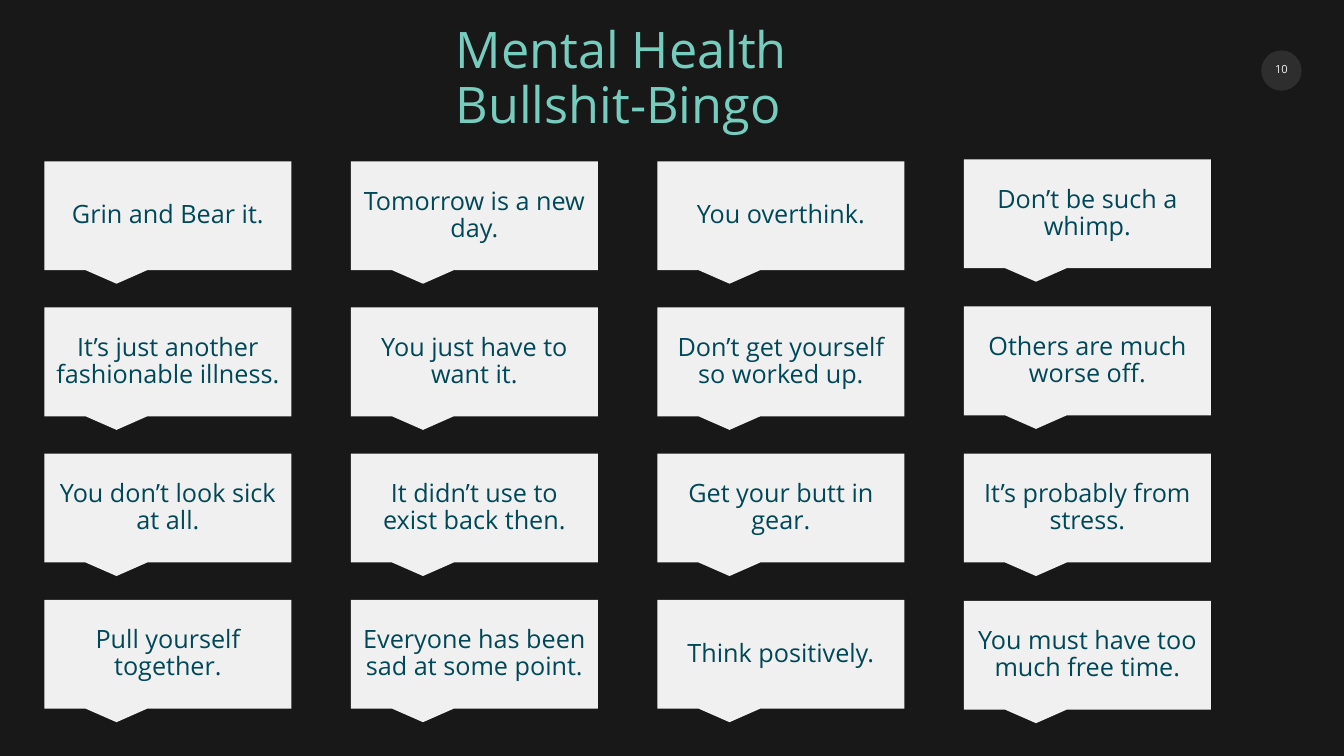
from lxml import etree
from pptx import Presentation, util as u
from pptx.dml.color import RGBColor
from pptx.enum import shapes, text
from pptx.oxml import ns

HUES = {"back": "181818", "card": "F0F0F0", "ink": "004857", "head": "76CCBD"}
PHRASES = [
    ["Grin and Bear it.", "Tomorrow is a new day.", "You overthink.", "Don’t be such a whimp."],
    ["It’s just another fashionable illness.", "You just have to want it.",
     "Don’t get yourself so worked up.", "Others are much worse off."],
    ["You don’t look sick at all.", "It didn’t use to exist back then.",
     "Get your butt in gear.", "It’s probably from stress."],
    ["Pull yourself together.", "Everyone has been sad at some point.",
     "Think positively.", "You must have too much free time."],
]


def fit(thing, form):
    for name, value in form.items():
        setattr(thing, name, value)


class Board:
    """Hold the style and the current slide of the bingo board."""

    font = "Open Sans"
    left, top = 0.44, 1.6
    col, row = 3.04, 1.45
    wide, high = 2.45, 1.08

    def __init__(self, deck):
        self.slide = deck.slides.add_slide(deck.slide_layouts[5])
        self.paint(self.slide.background.fill, "back")

    def paint(self, fill, hue):
        fill.solid()
        fill.fore_color.rgb = RGBColor.from_string(HUES[hue])

    def letter(self, shape, words, size, hue, align, anchor, pad=(0.1, 0.05)):
        frame = shape.text_frame
        side, edge = map(u.Inches, pad)
        fit(frame, {"word_wrap": True, "auto_size": text.MSO_AUTO_SIZE.NONE,
                    "vertical_anchor": anchor, "margin_left": side, "margin_right": side,
                    "margin_top": edge, "margin_bottom": edge})
        para = frame.paragraphs[0]
        para.text = words
        fit(para, {"alignment": align, "line_spacing": 0.9})
        for run in para.runs:
            fit(run.font, {"name": self.font, "size": u.Pt(size)})
            run.font.color.rgb = RGBColor.from_string(HUES[hue])

    def title(self, words, *box):
        shape = self.slide.shapes.title
        fit(shape, dict(zip(("left", "top", "width", "height"), map(u.Inches, box))))
        self.letter(shape, words, 36, "head", text.PP_ALIGN.LEFT, text.MSO_ANCHOR.TOP)

    def shape(self, kind, *box):
        shape = self.slide.shapes.add_shape(kind, *map(u.Inches, box))
        self.paint(shape.fill, "card")
        shape.line.fill.background()
        shape.shadow.inherit = False
        return shape

    def card(self, words, col, row, top, step):
        card = self.shape(shapes.MSO_SHAPE.ROUNDED_RECTANGULAR_CALLOUT,
                          self.left + col * self.col, top + row * step, self.wide, self.high)
        for spot, value in enumerate((-0.208, 0.625, 0)):
            card.adjustments[spot] = value
        self.letter(card, words, 18, "ink", text.PP_ALIGN.CENTER, text.MSO_ANCHOR.MIDDLE)

    def grid(self, rows):
        for row, line in enumerate(rows):
            for col, words in enumerate(line):
                last = col == len(line) - 1
                top, step = (1.58, 1.46) if last else (self.top, self.row)
                self.card(words, col, row, top, step)

    def badge(self, words):
        disc = self.shape(shapes.MSO_SHAPE.OVAL, 12.51, 0.5, 0.4, 0.4)
        tint = disc.element.find(".//" + ns.qn("a:srgbClr"))
        etree.SubElement(tint, ns.qn("a:alpha"), val="10000")
        label = self.slide.shapes.add_textbox(*map(u.Inches, (12.43, 0.57, 0.56, 0.25)))
        self.letter(label, words, 8, "card", text.PP_ALIGN.CENTER,
                    text.MSO_ANCHOR.MIDDLE, (0, 0))


def main():
    deck = Presentation()
    fit(deck, {"slide_width": u.Inches(13.33), "slide_height": u.Inches(7.5)})
    board = Board(deck)
    board.title("Mental Health\vBullshit-Bingo", 4.42, 0.2, 7.85, 1.31)
    board.badge("10")
    board.grid(PHRASES)
    deck.save("out.pptx")


if __name__ == "__main__":
    main()
